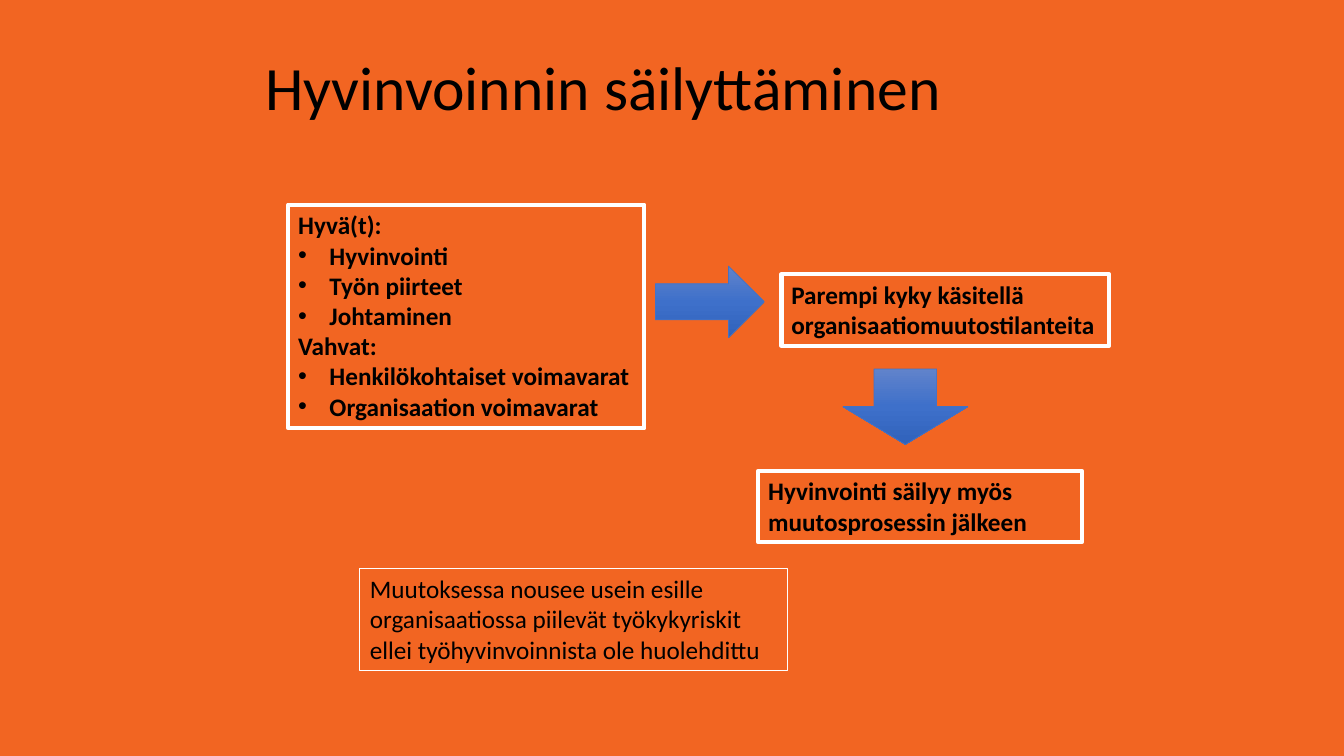
"""Build a slide on keeping well-being through change."""
from copy import deepcopy
from dataclasses import dataclass

from lxml.etree import SubElement
from pptx import Presentation
from pptx.dml.color import RGBColor
from pptx.enum.shapes import MSO_SHAPE
from pptx.enum.text import MSO_ANCHOR, MSO_AUTO_SIZE, PP_ALIGN
from pptx.oxml.ns import qn
from pptx.slide import Slide
from pptx.util import Pt

PX = 9144
INDENT = 31
FONT = "Calibri"
COLORS = {
    "back": "F26522",
    "text": "000000",
    "frame": "FFFFFF",
    "edge": "4472C4",
    "top": "6183CB",
    "mid": "3E70CA",
    "low": "3062BB",
}


@dataclass
class Box:
    at: tuple[int, int, int, int]
    lines: list[str]
    size: int = 18
    bold: bool = True
    frame: float = 3


@dataclass
class Arrow:
    at: tuple[int, int, int, int]
    kind: MSO_SHAPE


TITLE = Box((263, 55, 811, 68), ["Hyvinvoinnin säilyttäminen"], 44, False, 0)
BOXES = [
    Box((286, 203, 353, 222), [
        "Hyvä(t):", "• Hyvinvointi", "• Työn piirteet", "• Johtaminen",
        "Vahvat:", "• Henkilökohtaiset voimavarat", "• Organisaation voimavarat",
    ]),
    Box((775, 272, 325, 71), ["Parempi kyky käsitellä organisaatiomuutostilanteita"]),
    Box((752, 467, 321, 71), ["Hyvinvointi säilyy myös muutosprosessin jälkeen"]),
    Box((357, 564, 424, 101), [
        "Muutoksessa nousee usein esille organisaatiossa piilevät työkykyriskit "
        "ellei työhyvinvoinnista ole huolehdittu",
    ], bold=False, frame=0.75),
]
ARROWS = [
    Arrow((650, 264, 108, 71), MSO_SHAPE.RIGHT_ARROW),
    Arrow((836, 366, 124, 75), MSO_SHAPE.DOWN_ARROW),
]


def color(name: str) -> RGBColor:
    return RGBColor.from_string(COLORS[name])


def scale(at: tuple[int, int, int, int]) -> list[int]:
    return [n * PX for n in at]


def draw_box(slide: Slide, box: Box):
    shape = slide.shapes.add_textbox(*scale(box.at))
    frame = shape.text_frame
    frame.word_wrap = True
    frame.text = "\n".join(line.removeprefix("• ") for line in box.lines)
    for par, line in zip(frame.paragraphs, box.lines):
        par.alignment = PP_ALIGN.LEFT
        for run in par.runs:
            run.font.name = FONT
            run.font.size = Pt(box.size)
            run.font.bold = box.bold
            run.font.color.rgb = color("text")
        if line.startswith("•"):
            props = par._p.get_or_add_pPr()
            props.set("marL", str(INDENT * PX))
            props.set("indent", str(-INDENT * PX))
            SubElement(props, qn("a:buFont"), typeface="Arial")
            SubElement(props, qn("a:buChar"), char="•")
    if box.frame:
        frame.auto_size = MSO_AUTO_SIZE.SHAPE_TO_FIT_TEXT
        shape.line.color.rgb = color("frame")
        shape.line.width = Pt(box.frame)
    return shape


def draw_title(slide: Slide, box: Box) -> None:
    frame = draw_box(slide, box).text_frame
    frame.vertical_anchor = MSO_ANCHOR.BOTTOM
    frame.margin_left = frame.margin_right = 0
    frame.margin_top = frame.margin_bottom = 0
    frame.paragraphs[0].line_spacing = 0.9


def draw_arrow(slide: Slide, arrow: Arrow) -> None:
    shape = slide.shapes.add_shape(arrow.kind, *scale(arrow.at))
    shape.shadow.inherit = False
    shape.line.color.rgb = color("edge")
    shape.line.width = Pt(0.5)
    fill = shape.fill
    fill.gradient()
    fill.gradient_angle = 270
    first = shape._element.spPr.find(".//" + qn("a:gs"))
    first.addnext(deepcopy(first))
    for stop, name, place in zip(fill.gradient_stops, ("top", "mid", "low"), (0, 0.5, 1)):
        stop.color.rgb = color(name)
        stop.position = place


def main() -> None:
    deck = Presentation()
    deck.slide_width, deck.slide_height = 1333 * PX, 750 * PX
    slide = deck.slides.add_slide(deck.slide_layouts[6])
    slide.background.fill.solid()
    slide.background.fill.fore_color.rgb = color("back")
    draw_title(slide, TITLE)
    for box in BOXES:
        draw_box(slide, box)
    for arrow in ARROWS:
        draw_arrow(slide, arrow)
    deck.save("out.pptx")


if __name__ == "__main__":
    main()
